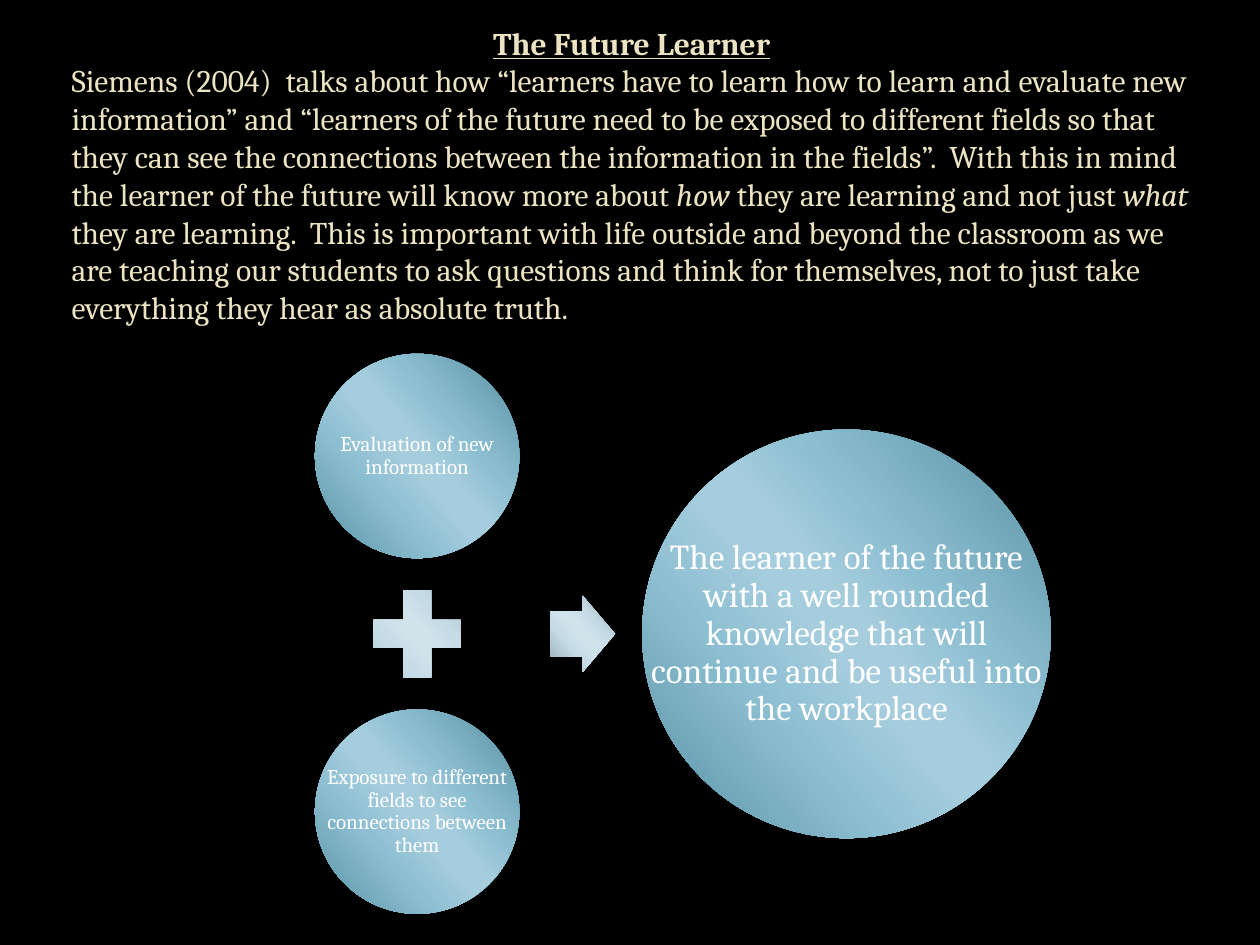
from dataclasses import dataclass

from lxml.etree import SubElement
from pptx import Presentation
from pptx.dml.color import RGBColor as Color
from pptx.enum.shapes import MSO_SHAPE as Preset
from pptx.enum.text import MSO_ANCHOR as Anchor, MSO_AUTO_SIZE as AutoSize, PP_ALIGN as Align
from pptx.oxml.ns import qn
from pptx.util import Pt


@dataclass(frozen=True)
class Theme:
    font: str = "Cambria"
    backdrop: str = "000000"
    cream: str = "EBE3C2"
    white: str = "FFFFFF"
    body_size: int = 18
    small_size: int = 12
    large_size: int = 20
    gradient_angle: int = 139
    stops: tuple = (0, 33, 47, 53, 68, 100)
    deep: tuple = ("568EA1", "8CBED1", "A6CDDD", "A6CDDD", "8DBFD2", "568EA1")
    pale: tuple = ("95AAB4", "C5DBE5", "CFE3EB", "CFE3EB", "C5DBE5", "95AAB4")


def add_span(para, text, *, font, size, color, bold=False, italic=False, underline=False):
    span = para.add_run()
    span.text = text
    span.font.name = font
    span.font.size = Pt(size)
    span.font.color.rgb = Color.from_string(color)
    span.font.bold = bold
    span.font.italic = italic
    span.font.underline = underline


class Painter:
    def __init__(self, page, theme):
        self.page = page
        self.theme = theme

    def background(self):
        fill = self.page.background.fill
        fill.solid()
        fill.fore_color.rgb = Color.from_string(self.theme.backdrop)

    def shape(self, preset, center_x, center_y, width, height, colors):
        shape = self.page.shapes.add_shape(
            preset, Pt(center_x - width / 2), Pt(center_y - height / 2), Pt(width), Pt(height))
        shape.shadow.inherit = False
        shape.line.fill.background()
        shape.fill.gradient()
        gradient = shape._element.spPr.find(qn("a:gradFill"))
        stop_list = gradient.find(qn("a:gsLst"))
        stop_list.clear()
        for position, color in zip(self.theme.stops, colors):
            stop = SubElement(stop_list, qn("a:gs"), pos=str(position * 1000))
            SubElement(stop, qn("a:srgbClr"), val=color)
        gradient.find(qn("a:lin")).set("ang", str(self.theme.gradient_angle * 60000))
        return shape

    def text_box(self, left, top, width, height, inset=None):
        box = self.page.shapes.add_textbox(Pt(left), Pt(top), Pt(width), Pt(height))
        frame = box.text_frame
        frame.word_wrap = True
        if inset is not None:
            frame.margin_left = frame.margin_right = Pt(inset)
            frame.margin_top = frame.margin_bottom = Pt(inset)
        return frame

    def circle(self, center_x, center_y, diameter, text, size, inset):
        self.shape(Preset.OVAL, center_x, center_y, diameter, diameter, self.theme.deep)
        # The label spans the full circle, wider than its inscribed text area
        frame = self.text_box(center_x - diameter / 2, center_y - diameter / 2,
                              diameter, diameter, inset)
        frame.vertical_anchor = Anchor.MIDDLE
        para = frame.paragraphs[0]
        para.alignment = Align.CENTER
        para.line_spacing = 0.9
        add_span(para, text, font=self.theme.font, size=size, color=self.theme.white)

    def passage(self, left, top, width, height, heading, spans):
        style = dict(font=self.theme.font, size=self.theme.body_size, color=self.theme.cream)
        frame = self.text_box(left, top, width, height)
        frame.auto_size = AutoSize.SHAPE_TO_FIT_TEXT
        title = frame.paragraphs[0]
        title.alignment = Align.CENTER
        add_span(title, heading, bold=True, underline=True, **style)
        para = frame.add_paragraph()
        for text, italic in spans:
            add_span(para, text, italic=italic, **style)


def main():
    deck = Presentation()
    deck.slide_width, deck.slide_height = Pt(720), Pt(540)
    theme = Theme()
    painter = Painter(deck.slides.add_slide(deck.slide_layouts[6]), theme)
    painter.background()

    # Equation: two inputs stacked around a plus, leading to the result
    input_x, middle_y, step = 238.4, 362.2, 101.6
    inputs = ("Evaluation of new information",
              "Exposure to different fields to see connections between them")
    for text, side in zip(inputs, (-1, 1)):
        painter.circle(input_x, middle_y + side * step, 116.8, text, theme.small_size, 1.2)
    painter.shape(Preset.MATH_PLUS, input_x, middle_y, 67.7, 67.7, theme.pale)
    arrow = painter.shape(Preset.RIGHT_ARROW, 333, middle_y, 37, 43.5, theme.pale)
    arrow.adjustments[0] = 0.6
    painter.circle(483.7, middle_y, 233.5,
                   "The learner of the future with a well rounded knowledge that will "
                   "continue and be useful into the workplace", theme.large_size, 2)

    # Heading and passage
    painter.passage(33.8, 10, 654.5, 203.8, "The Future Learner", (
        ("Siemens (2004)  talks about how “learners have to learn how to learn and evaluate "
         "new information” and “learners of the future need to be exposed to different fields "
         "so that they can see the connections between the information in the fields”.  With "
         "this in mind the learner of the future will know more about ", False),
        ("how", True),
        (" they are learning and not just ", False),
        ("what", True),
        (" they are learning.  This is important with life outside and beyond the classroom "
         "as we are teaching our students to ask questions and think for themselves, not to "
         "just take everything they hear as absolute truth.", False),
    ))

    deck.save("out.pptx")


if __name__ == "__main__":
    main()
